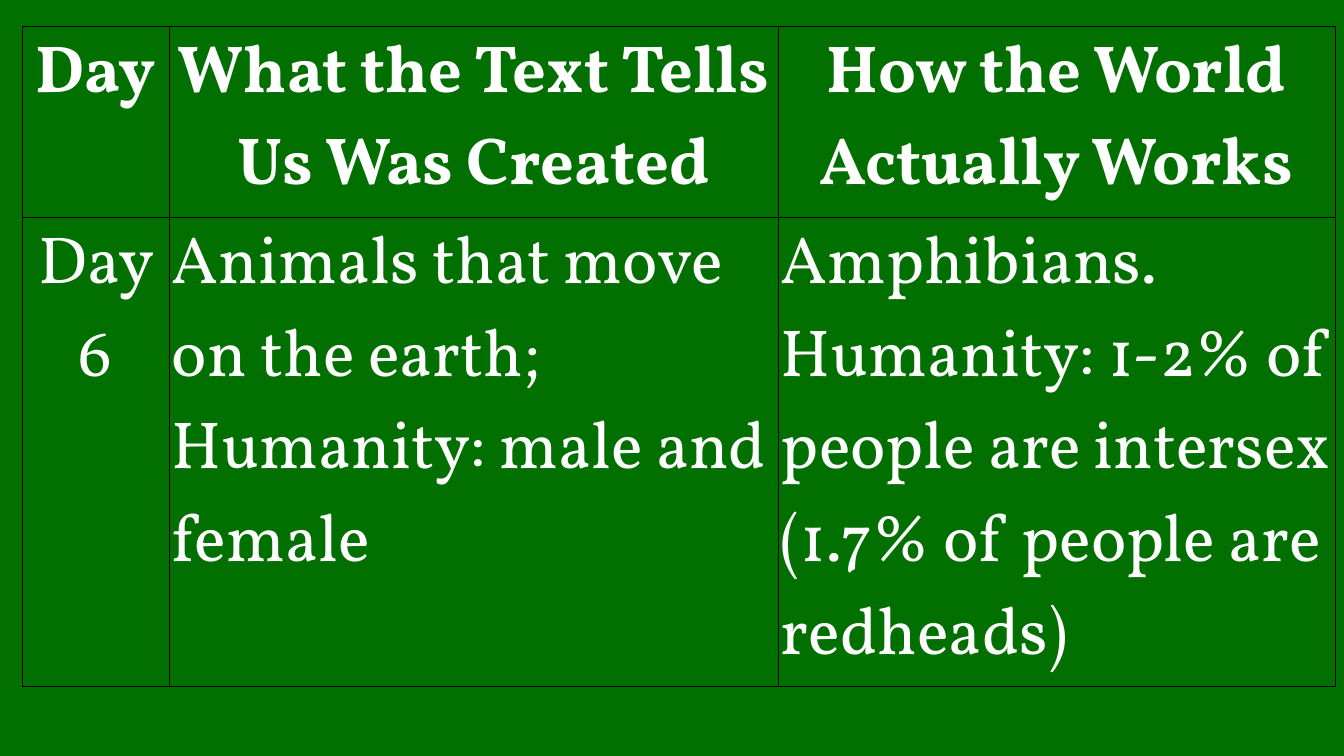
import pptx
import pptx.dml.color
import pptx.enum.text
import pptx.oxml
import pptx.oxml.ns
import pptx.util

PX = 18143  # EMU per px
GREEN, WHITE, BLACK = "027001", "FFFFFF", "000000"
ALIGN = pptx.enum.text.PP_ALIGN

COLUMNS = [147, 609, 557]
ROWS = [108, 110]
CELLS = [
    ["Day", "What the Text Tells Us Was Created", "How the World Actually Works"],
    ["Day 6", "Animals that move on the earth; Humanity: male and female",
     "Amphibians.\nHumanity: 1-2% of people are intersex\n(1.7% of people are redheads)"],
]


def px(n):
    return pptx.util.Emu(n * PX)


def color(value):
    return pptx.dml.color.RGBColor.from_string(value)


def paint(fill, value):
    fill.solid()
    fill.fore_color.rgb = color(value)


def add_borders(cell, value, width):
    tcPr = cell._tc.get_or_add_tcPr()
    # Border lines come before the fill
    for i, side in enumerate(("lnL", "lnR", "lnT", "lnB")):
        ln = pptx.oxml.parse_xml(
            f'<a:{side} {pptx.oxml.ns.nsdecls("a")} w="{pptx.util.Pt(width)}">'
            f'<a:solidFill><a:srgbClr val="{value}"/></a:solidFill></a:{side}>')
        tcPr.insert(i, ln)


def fill_cell(cell, text, bold, align):
    for side in ("left", "right", "top", "bottom"):
        setattr(cell, f"margin_{side}", px(3))
    paint(cell.fill, GREEN)
    add_borders(cell, BLACK, 0.35)
    tf = cell.text_frame
    tf.text = text
    font = {"name": "Vollkorn", "size": pptx.util.Pt(95), "bold": bold}
    for p in tf.paragraphs:
        p.alignment = align
        for r in p.runs:
            for name, value in font.items():
                setattr(r.font, name, value)
            r.font.color.rgb = color(WHITE)


def add_day_table(s):
    table = s.shapes.add_table(len(ROWS), len(COLUMNS), px(22), px(26),
                               px(sum(COLUMNS)), px(sum(ROWS))).table
    table.first_row = table.horz_banding = False
    for column, width in zip(table.columns, COLUMNS):
        column.width = px(width)
    for row, height in zip(table.rows, ROWS):
        row.height = px(height)
    for i, texts in enumerate(CELLS):
        for j, text in enumerate(texts):
            # The header row and the day column are centred
            align = ALIGN.CENTER if i == 0 or j == 0 else ALIGN.LEFT
            fill_cell(table.cell(i, j), text, i == 0, align)


def main():
    prs = pptx.Presentation()
    prs.slide_width, prs.slide_height = px(1344), px(756)
    s = prs.slides.add_slide(prs.slide_layouts[6])
    paint(s.background.fill, GREEN)
    add_day_table(s)
    prs.save("out.pptx")


if __name__ == "__main__":
    main()
